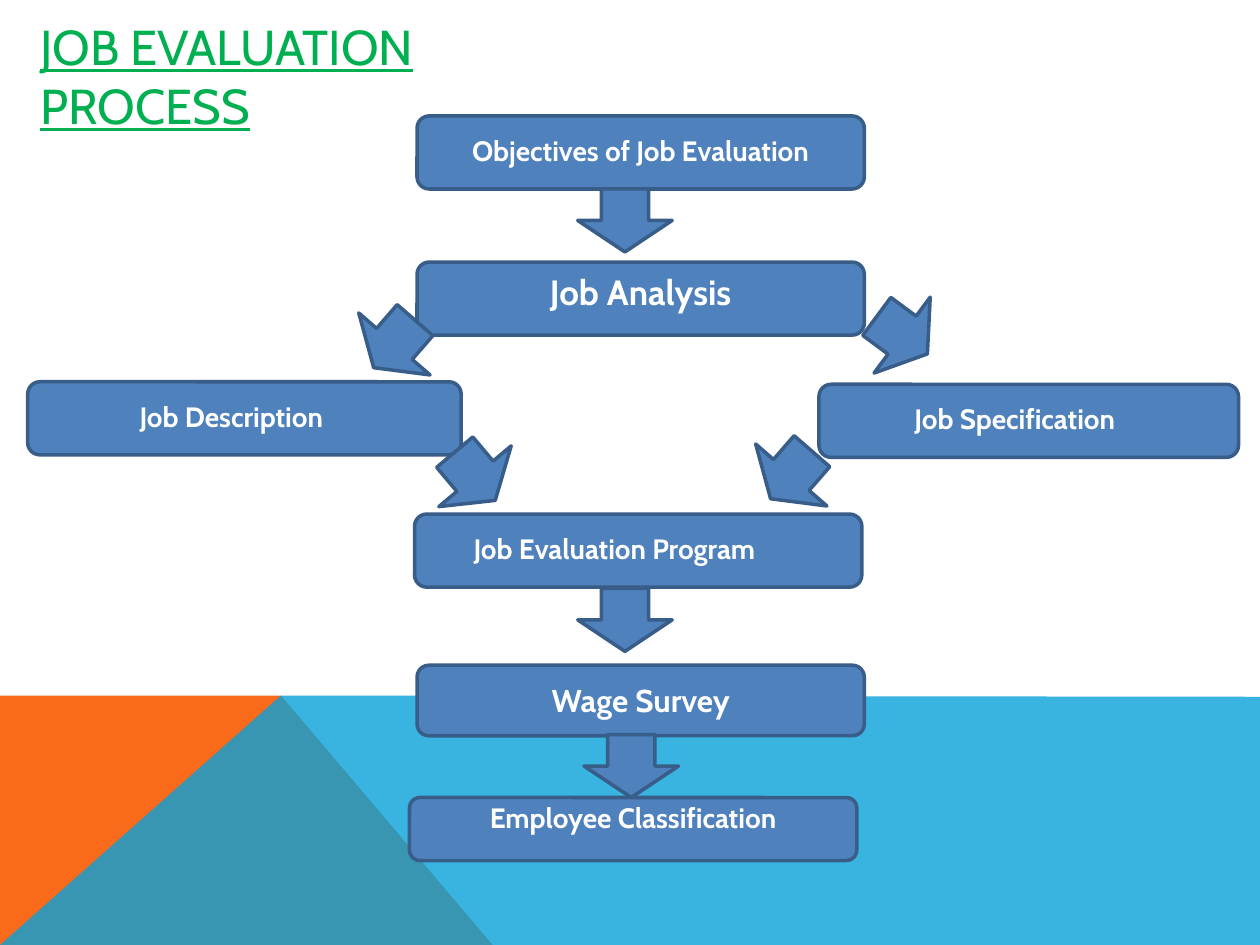
from lxml.etree import SubElement
from pptx import Presentation
from pptx.dml.color import RGBColor
from pptx.enum.shapes import MSO_SHAPE as Preset
from pptx.enum.text import MSO_ANCHOR as Anchor, PP_ALIGN as Align
from pptx.oxml.ns import qn
from pptx.util import Inches, Pt

COLORS = {
    "orange": "F96A1B",
    "sky": "08A1D9",
    "title": "00AF50",
    "box": "4F81BC",
    "outline": "385D89",
    "label": "FFFFFF",
}
TITLE_FONT = {"name": "Cabin", "size": Pt(28), "underline": True}
LABEL_FONT = {"name": "Cabin", "bold": True}
FRAME = {"word_wrap": True, "margin_left": 0, "margin_right": 0, "margin_top": 0, "margin_bottom": 0}

BANDS = [
    ("orange", None, [(0, 7.5), (0, 5.52), (2.23, 5.52), (3.91, 7.5)]),
    ("sky", 80, [(0, 7.5), (2.23, 5.52), (10, 5.53), (10, 7.5)]),
]
BOXES = [
    ("Objectives of Job Evaluation", 16, (3.31, 0.92, 3.55, 0.58), 0.11, None),
    ("Job Analysis", 20, (3.31, 2.08, 3.55, 0.58), 0.04, None),
    ("Job Description", 16, (0.22, 3.03, 3.44, 0.58), 0.11, 0.86),
    ("Job Specification", 16, (6.5, 3.05, 3.33, 0.58), 0.11, 0.73),
    ("Job Evaluation Program", 16, (3.29, 4.08, 3.55, 0.58), 0.11, 0.44),
    ("Wage Survey", 18, (3.31, 5.28, 3.55, 0.56), 0.1, None),
    ("Employee Classification", 16, (3.25, 6.33, 3.55, 0.5), 0, None),
]
ARROW_WIDTH, ARROW_LENGTH = 0.75, 0.5
ARROWS = [
    (4.96, 1.75, 0),
    (3.13, 2.73, 41),
    (7.16, 2.66, -53.5),
    (3.77, 3.78, -40),
    (6.28, 3.77, 41),
    (4.96, 4.92, 0),
    (5.01, 6.08, 0),
]


def apply(target, values):
    """Set each attribute named in a dict of format values."""
    for name, value in values.items():
        setattr(target, name, value)


def paint(shape, fill, outline=None):
    """Give a shape a solid fill and an optional outline, without shadow."""
    shape.shadow.inherit = False
    shape.fill.solid()
    shape.fill.fore_color.rgb = RGBColor.from_string(COLORS[fill])
    if outline:
        shape.line.color.rgb = RGBColor.from_string(COLORS[outline])
        shape.line.width = Pt(2)
    else:
        shape.line.fill.background()


def write(shape, text, font, color, anchor, align):
    """Write one formatted paragraph into a shape."""
    frame = shape.text_frame
    apply(frame, {**FRAME, "vertical_anchor": anchor})
    paragraph = frame.paragraphs[0]
    paragraph.alignment = align
    run = paragraph.add_run()
    run.text = text
    apply(run.font, font)
    run.font.color.rgb = RGBColor.from_string(COLORS[color])


def add_band(slide, color, opacity, points):
    """Add a background polygon, optionally translucent."""
    corners = [(Inches(x), Inches(y)) for x, y in points]
    builder = slide.shapes.build_freeform(*corners[0])
    builder.add_line_segments(corners[1:], close=True)
    shape = builder.convert_to_shape()
    paint(shape, color)
    if opacity:
        solid_color = shape.fill._xPr.find(qn("a:solidFill"))[0]
        SubElement(solid_color, qn("a:alpha")).set("val", str(opacity * 1000))


def add_title(slide, text):
    """Add the slide heading."""
    shape = slide.shapes.add_textbox(Inches(0.32), Inches(0.35), Inches(3.65), Inches(0.5))
    write(shape, text, TITLE_FONT, "title", Anchor.MIDDLE, Align.LEFT)


def add_box(slide, text, size, bounds, top, indent):
    """Add a process step; an indent makes its label left aligned."""
    shape = slide.shapes.add_shape(Preset.ROUNDED_RECTANGLE, *map(Inches, bounds))
    paint(shape, "box", "outline")
    align = Align.CENTER if indent is None else Align.LEFT
    write(shape, text, {**LABEL_FONT, "size": Pt(size)}, "label", Anchor.TOP, align)
    apply(shape.text_frame, {"margin_top": Inches(top), "margin_left": Inches(indent or 0)})


def add_arrow(slide, center_x, center_y, rotation):
    """Add a block arrow around its centre, turned from pointing down."""
    shape = slide.shapes.add_shape(
        Preset.DOWN_ARROW,
        Inches(center_x - ARROW_WIDTH / 2),
        Inches(center_y - ARROW_LENGTH / 2),
        Inches(ARROW_WIDTH),
        Inches(ARROW_LENGTH),
    )
    shape.rotation = rotation
    paint(shape, "box", "outline")


def main():
    """Build the job evaluation process slide."""
    presentation = Presentation()
    apply(presentation, {"slide_width": Inches(10), "slide_height": Inches(7.5)})
    slide = presentation.slides.add_slide(presentation.slide_layouts[6])
    for band in BANDS:
        add_band(slide, *band)
    add_title(slide, "JOB EVALUATION PROCESS")
    for box in BOXES:
        add_box(slide, *box)
    for arrow in ARROWS:
        add_arrow(slide, *arrow)
    presentation.save("out.pptx")


if __name__ == "__main__":
    main()
